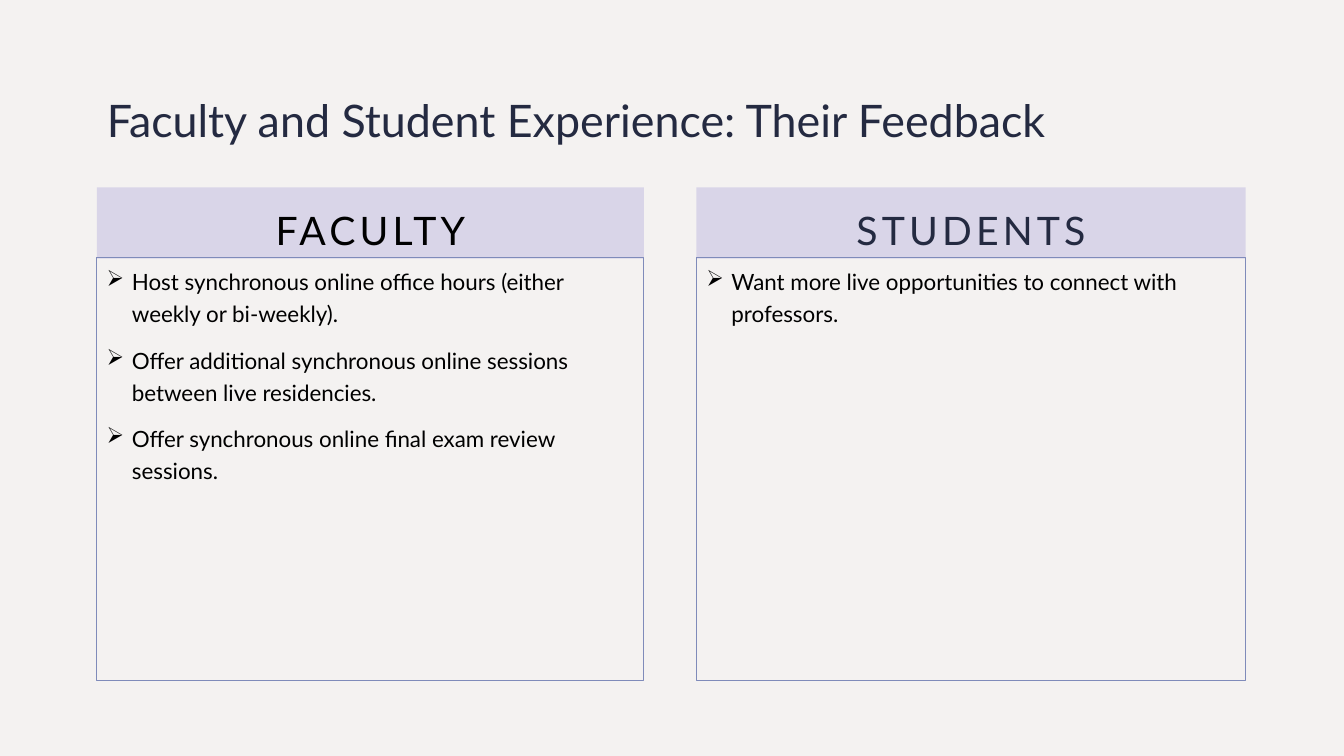
from pptx import Presentation
from pptx.dml.color import RGBColor
from pptx.enum.shapes import MSO_SHAPE
from pptx.enum.text import MSO_ANCHOR, MSO_AUTO_SIZE, PP_ALIGN
from pptx.oxml.xmlchemy import OxmlElement
from pptx.util import Cm, Pt

COLORS = {
    "background": "F4F2F1",
    "navy": "242A41",
    "black": "000000",
    "lavender": "D9D5E8",
    "border": "7F8BBA",
}
FRAME = {"word_wrap": True, "auto_size": MSO_AUTO_SIZE.NONE}
PARAGRAPH = {"line_spacing": 1.2, "space_before": Pt(10)}


def rgb(name):
    return RGBColor.from_string(COLORS[name])


def write(frame, lines, size, color, anchor, align):
    for key, value in {**FRAME, "vertical_anchor": anchor}.items():
        setattr(frame, key, value)
    frame.text = "\n".join(lines)
    for paragraph in frame.paragraphs:
        for key, value in {**PARAGRAPH, "alignment": align}.items():
            setattr(paragraph, key, value)
        font = paragraph.runs[0].font
        for key, value in {"name": "Lato", "size": Pt(size)}.items():
            setattr(font, key, value)
        font.color.rgb = rgb(color)


prs = Presentation()
prs.slide_width, prs.slide_height = Cm(33.87), Cm(19.05)
slide = prs.slides.add_slide(prs.slide_layouts[5])
slide.background.fill.solid()
slide.background.fill.fore_color.rgb = rgb("background")

# Title
title = slide.shapes.title
title.left, title.top, title.width, title.height = Cm(2.44), Cm(1.68), Cm(28.98), Cm(2.13)
write(title.text_frame, ["Faculty and Student Experience: Their Feedback"],
      32, "navy", MSO_ANCHOR.BOTTOM, PP_ALIGN.LEFT)
title.text_frame.paragraphs[0].line_spacing = 1.0

# Feedback columns: heading, heading color, left, width, points
columns = [
    ("FACULTY", "black", 2.44, 13.79, [
        "Host synchronous online office hours (either weekly or bi-weekly).",
        "Offer additional synchronous online sessions between live residencies.",
        "Offer synchronous online final exam review sessions.",
    ]),
    ("STUDENTS", "navy", 17.55, 13.84, [
        "Want more live opportunities to connect with professors.",
    ]),
]
for group, group_color, left, width, points in columns:
    # Heading band with widely spaced letters
    heading = slide.shapes.add_shape(
        MSO_SHAPE.RECTANGLE, Cm(left), Cm(4.72), Cm(width), Cm(1.8))
    heading.shadow.inherit = False
    heading.fill.solid()
    heading.fill.fore_color.rgb = rgb("lavender")
    heading.line.fill.background()
    write(heading.text_frame, [group], 28, group_color,
          MSO_ANCHOR.BOTTOM, PP_ALIGN.CENTER)
    run = heading.text_frame.paragraphs[0].runs[0]
    run.font._element.set("spc", "300")

    # Outlined box with arrow bullets
    feedback = slide.shapes.add_shape(
        MSO_SHAPE.RECTANGLE, Cm(left), Cm(6.5), Cm(width), Cm(10.64))
    feedback.shadow.inherit = False
    feedback.fill.background()
    feedback.line.color.rgb = rgb("border")
    feedback.line.width = Pt(0.75)
    write(feedback.text_frame, points, 16, "black", MSO_ANCHOR.TOP, PP_ALIGN.LEFT)
    for paragraph in feedback.text_frame.paragraphs:
        properties = paragraph._p.get_or_add_pPr()
        indent = Cm(0.635)
        properties.set("marL", str(indent))
        properties.set("indent", str(-indent))
        bullet = OxmlElement("a:buChar")
        bullet.set("char", "➢")
        properties.append(bullet)

prs.save("out.pptx")
